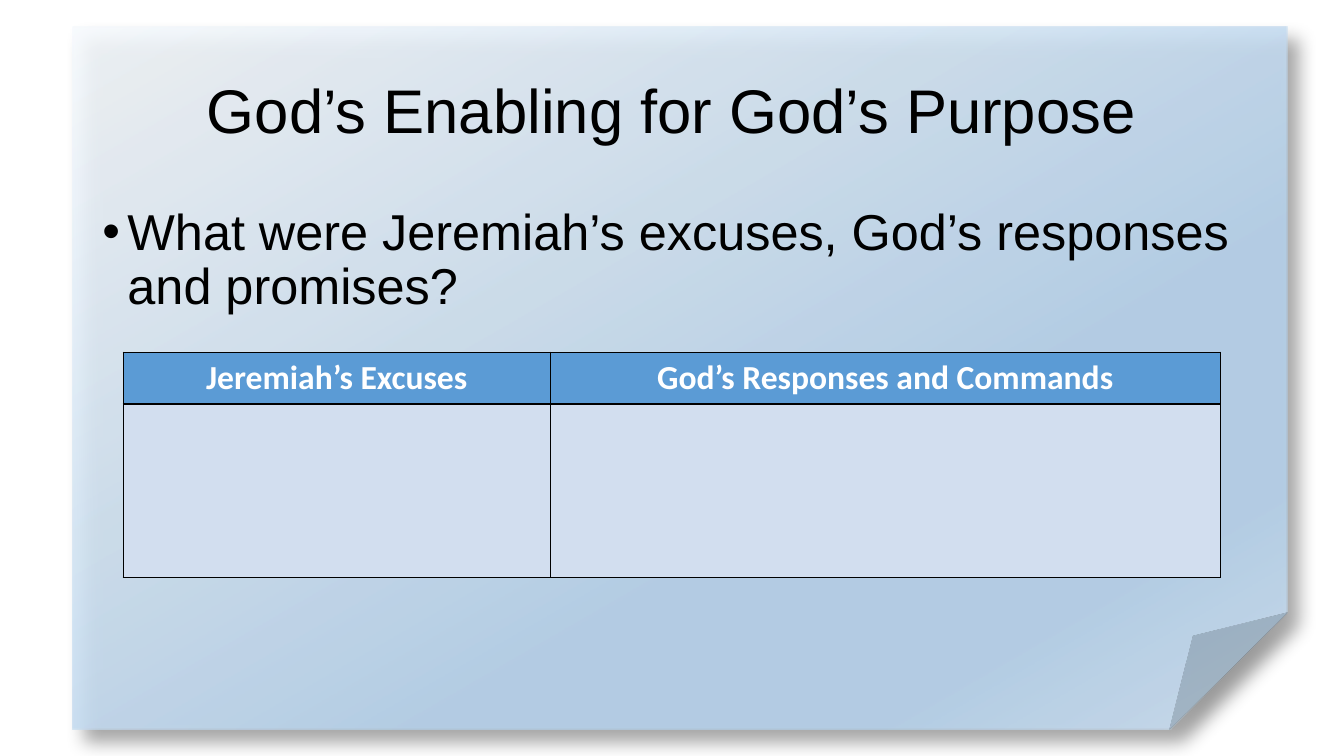
from lxml import etree
from pptx import Presentation
from pptx.dml.color import RGBColor
from pptx.enum.shapes import MSO_SHAPE as Preset
from pptx.enum.text import MSO_ANCHOR as Anchor, PP_ALIGN as Align
from pptx.oxml import parse_xml
from pptx.oxml.ns import nsdecls, qn
from pptx.util import Pt

BLACK = RGBColor(0x00, 0x00, 0x00)
WHITE = RGBColor(0xFF, 0xFF, 0xFF)
HEADER_BLUE = RGBColor(0x5B, 0x9B, 0xD5)
CELL_BLUE = RGBColor(0xD2, 0xDE, 0xEF)
PAPER_LIGHT = RGBColor(0xF7, 0xFA, 0xFD)
PAPER_BLUE = RGBColor(0xB5, 0xD2, 0xEC)
PAPER_CORNER = RGBColor(0xCE, 0xE1, 0xF2)
PAPER_STOPS = ((0, PAPER_LIGHT), (64, PAPER_BLUE), (83, PAPER_BLUE), (100, PAPER_CORNER))


class StudySlide:
    heading_font = "Arial"
    table_font = "Calibri"
    paper_opacity = 87

    def __init__(self, slide):
        self.shapes = slide.shapes

    def paper(self, left, top, width, height):
        """Draw the translucent sheet with a folded corner and a soft shadow."""
        sheet = self.shapes.add_shape(
            Preset.FOLDED_CORNER, Pt(left), Pt(top), Pt(width), Pt(height))
        sheet.line.fill.background()
        stops = "".join(
            f'<a:gs pos="{at * 1000}"><a:srgbClr val="{colour}">'
            f'<a:alpha val="{self.paper_opacity * 1000}"/></a:srgbClr></a:gs>'
            for at, colour in PAPER_STOPS)
        gradient = parse_xml(
            f'<a:gradFill {nsdecls("a")} rotWithShape="1"><a:gsLst>{stops}</a:gsLst>'
            f'<a:lin ang="{60 * 60000}" scaled="0"/></a:gradFill>')
        shadow = parse_xml(
            f'<a:effectLst {nsdecls("a")}><a:outerShdw blurRad="{Pt(13)}" dist="{Pt(13)}" '
            f'dir="{45 * 60000}" algn="tl" rotWithShape="0"><a:srgbClr val="{BLACK}">'
            '<a:alpha val="40000"/></a:srgbClr></a:outerShdw></a:effectLst>')
        properties = sheet.fill._xPr
        properties.find(qn("a:prstGeom")).addnext(gradient)
        properties.append(shadow)

    def text(self, wording, left, top, width, height, size,
             align=Align.LEFT, anchor=Anchor.TOP, bullet=False):
        frame = self.shapes.add_textbox(Pt(left), Pt(top), Pt(width), Pt(height)).text_frame
        frame.word_wrap = True
        frame.vertical_anchor = anchor
        paragraph = frame.paragraphs[0]
        paragraph.text = wording
        paragraph.alignment = align
        paragraph.line_spacing = 0.9
        if bullet:
            properties = paragraph._p.get_or_add_pPr()
            properties.set("marL", str(Pt(18)))
            properties.set("indent", str(-Pt(18)))
            etree.SubElement(properties, qn("a:buFont"), typeface=self.heading_font)
            etree.SubElement(properties, qn("a:buChar"), char="•")
        self.style(paragraph, self.heading_font, size, BLACK)

    def style(self, paragraph, name, size, colour, bold=False):
        font = paragraph.font
        font.name, font.size, font.bold = name, Pt(size), bold
        font.color.rgb = colour

    def table(self, headings, left, top, widths, heights):
        """Draw a header row over empty answer cells."""
        grid = self.shapes.add_table(
            len(heights), len(widths), Pt(left), Pt(top),
            Pt(sum(widths)), Pt(sum(heights))).table
        for column, width in zip(grid.columns, widths):
            column.width = Pt(width)
        for row, height in zip(grid.rows, heights):
            row.height = Pt(height)
        for heading, cell in zip(headings, grid.rows[0].cells):
            cell.text = heading
            paragraph = cell.text_frame.paragraphs[0]
            paragraph.alignment = Align.CENTER
            self.style(paragraph, self.table_font, 24, WHITE, bold=True)
        for number, row in enumerate(grid.rows):
            for cell in row.cells:
                self.border(cell)
                cell.fill.solid()
                cell.fill.fore_color.rgb = CELL_BLUE if number else HEADER_BLUE

    def border(self, cell):
        properties = cell._tc.get_or_add_tcPr()
        for side in ("lnL", "lnR", "lnT", "lnB"):
            properties.append(parse_xml(
                f'<a:{side} {nsdecls("a")} w="{Pt(1)}"><a:solidFill>'
                f'<a:srgbClr val="{BLACK}"/></a:solidFill></a:{side}>'))


def main():
    deck = Presentation()
    deck.slide_width, deck.slide_height = Pt(960), Pt(540)
    study = StudySlide(deck.slides.add_slide(deck.slide_layouts[6]))
    study.paper(51.6, 19.4, 867.8, 502)
    study.text("God’s Enabling for God’s Purpose", 66, 28.8, 828, 104.4, 44,
               align=Align.CENTER, anchor=Anchor.MIDDLE)
    study.text("What were Jeremiah’s excuses, God’s responses and promises?",
               66, 144, 828, 342.7, 36, bullet=True)
    study.table(("Jeremiah’s Excuses", "God’s Responses and Commands"),
                88, 251.6, widths=(305.2, 478.4), heights=(37, 124.2))
    deck.save("out.pptx")


if __name__ == "__main__":
    main()
